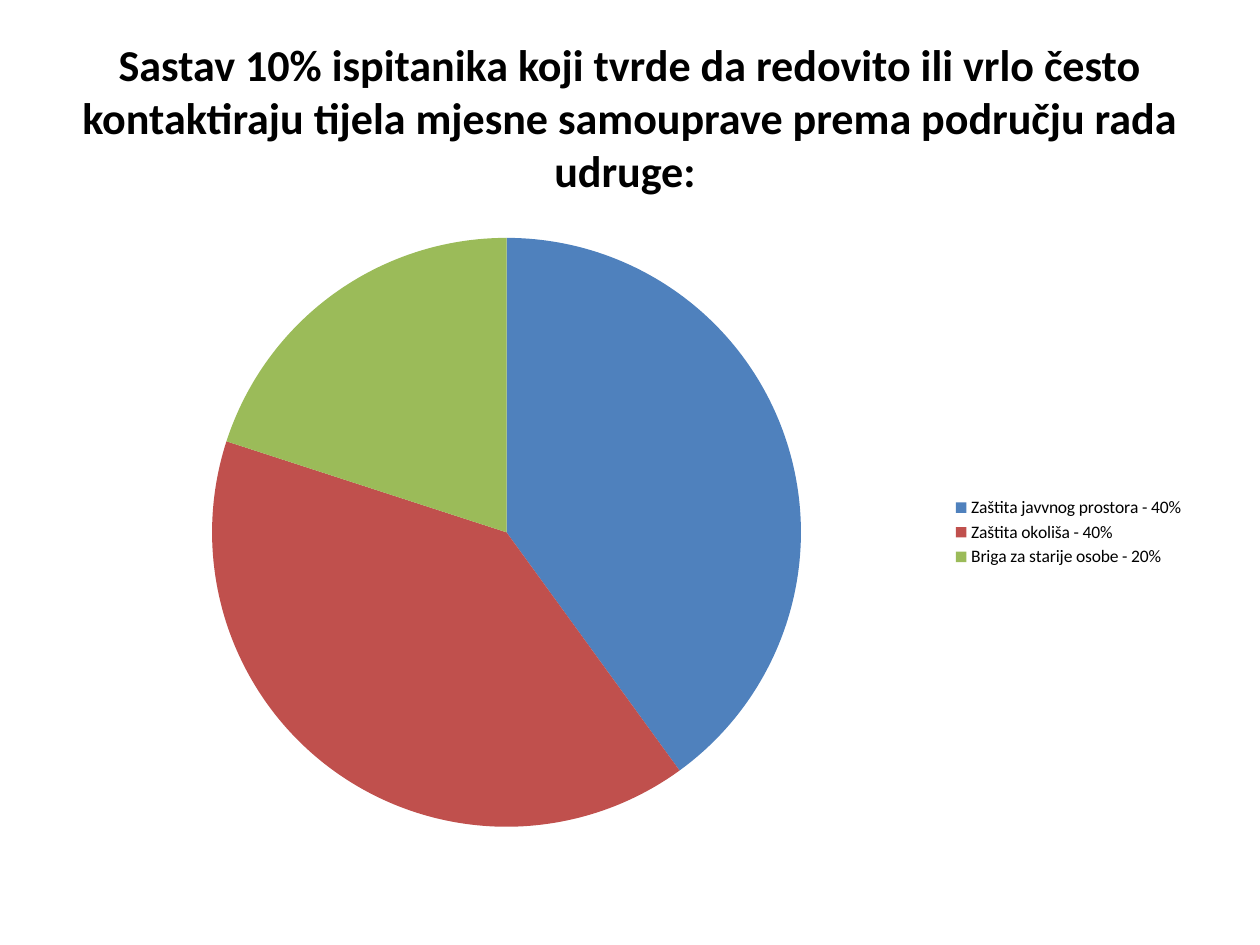
from pptx import Presentation
from pptx.chart.data import CategoryChartData
from pptx.dml.color import RGBColor
from pptx.enum.chart import XL_CHART_TYPE as ChartType, XL_LEGEND_POSITION as LegendPos
from pptx.enum.text import MSO_ANCHOR as Anchor, MSO_AUTO_SIZE as AutoSize, PP_ALIGN as Align
from pptx.util import Emu, Pt

PX = 9144
FONT = "Calibri"
COLORS = {"text": "000000", "public_space": "4F81BD", "environment": "C0504D", "elderly": "9BBB59"}
TITLE = ("Sastav 10% ispitanika koji tvrde da redovito ili vrlo često kontaktiraju "
         "tijela mjesne samouprave prema području rada udruge: ")
SHARES = [
    ("Zaštita javvnog prostora - 40%", 40, "public_space"),
    ("Zaštita okoliša - 40%", 40, "environment"),
    ("Briga za starije osobe - 20%", 20, "elderly"),
]


def px(*lengths):
    return [Emu(n * PX) for n in lengths]


def set_attrs(obj, values):
    for name, value in values.items():
        setattr(obj, name, value)


def format_font(font, size, bold=False):
    set_attrs(font, {"name": FONT, "size": Pt(size), "bold": bold})
    font.color.rgb = RGBColor.from_string(COLORS["text"])


def add_title(s, box):
    sp = s.shapes.title
    set_attrs(sp, dict(zip(("left", "top", "width", "height"), px(*box))))
    tf = sp.text_frame
    set_attrs(tf, {"word_wrap": True, "auto_size": AutoSize.NONE,
                   "vertical_anchor": Anchor.MIDDLE})
    p = tf.paragraphs[0]
    p.alignment = Align.CENTER
    r = p.add_run()
    r.text = TITLE
    format_font(r.font, 25.2, bold=True)


def add_pie(s, box):
    labels, values, keys = zip(*SHARES)
    data = CategoryChartData()
    data.categories = labels
    data.add_series("Series 1", values)
    chart = s.shapes.add_chart(ChartType.PIE, *px(*box), data).chart
    set_attrs(chart, {"has_title": False, "has_legend": True})
    set_attrs(chart.legend, {"position": LegendPos.RIGHT, "include_in_layout": False})
    format_font(chart.font, 10)
    plot = chart.plots[0]
    plot.vary_by_categories = True
    for i, key in enumerate(keys):
        fill = plot.series[0].points[i].format.fill
        fill.solid()
        fill.fore_color.rgb = RGBColor.from_string(COLORS[key])


def main():
    prs = Presentation()
    prs.slide_width, prs.slide_height = px(1000, 750)
    s = prs.slides.add_slide(prs.slide_layouts[5])
    add_title(s, (50, 30, 900, 125))
    add_pie(s, (50, 175, 900, 495))
    prs.save("out.pptx")


if __name__ == "__main__":
    main()
